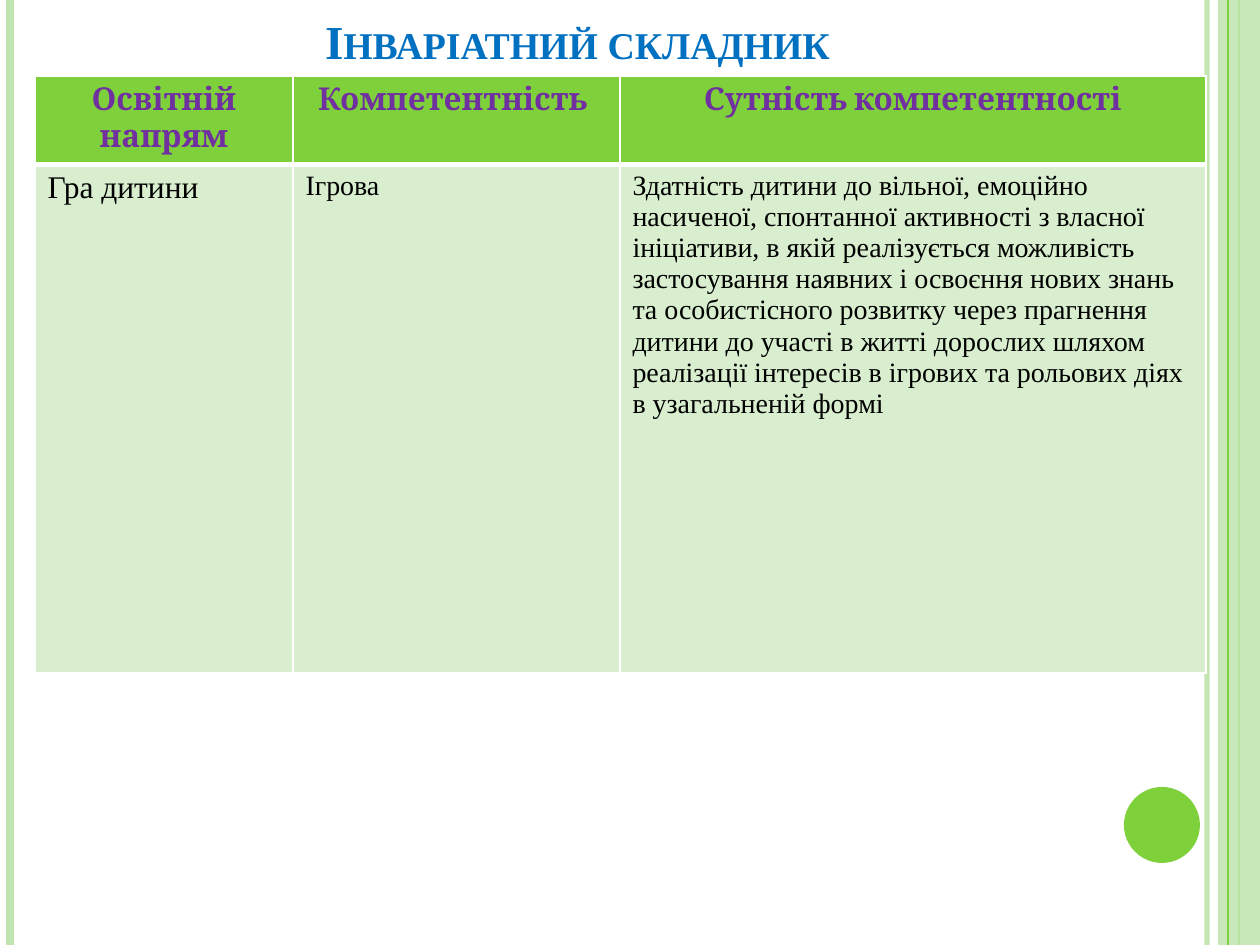
from lxml.etree import SubElement
from pptx import Presentation
from pptx.dml.color import RGBColor
from pptx.enum.shapes import MSO_CONNECTOR, MSO_SHAPE
from pptx.enum.text import MSO_ANCHOR, PP_ALIGN
from pptx.oxml.ns import qn
from pptx.util import Emu, Pt

EMU_PER_PX = 914400 // 126
WIDTH, HEIGHT = 1260, 945
COLORS = {
    "pale": "C0E5AF",
    "green": "7FD13B",
    "body": "D8EECE",
    "white": "FFFFFF",
    "black": "000000",
    "blue": "0070C0",
    "purple": "7030A0",
}
SERIF = "Times New Roman"
HEADINGS = ["Освітній напрям", "Компетентність ", "Сутність компетентності"]
DETAILS = [
    "Гра дитини",
    "Ігрова",
    "Здатність дитини до вільної, емоційно насиченої, спонтанної активності "
    "з власної ініціативи, в якій реалізується можливість застосування наявних "
    "і освоєння нових знань та особистісного розвитку через прагнення дитини "
    "до участі в житті дорослих шляхом реалізації інтересів в ігрових та "
    "рольових діях в узагальненій формі",
]


def px(value):
    return Emu(value * EMU_PER_PX)


def rgb(name):
    return RGBColor.from_string(COLORS[name])


def set_alpha(fill_owner, percent):
    color = next(fill_owner.iter(qn("a:srgbClr")))
    SubElement(color, qn("a:alpha"), val=str(percent * 1000))


class SlideBuilder:
    def __init__(self, slide):
        self.slide = slide

    def stripe(self, x, weight, color, opacity=100):
        line = self.slide.shapes.add_connector(
            MSO_CONNECTOR.STRAIGHT, px(x), 0, px(x), px(HEIGHT))
        line.line.color.rgb = rgb(color)
        line.line.width = Pt(weight)
        properties = line._element.spPr
        SubElement(properties, qn("a:effectLst"))
        if opacity < 100:
            set_alpha(properties, opacity)

    def shape(self, kind, box, color, opacity=100):
        shape = self.slide.shapes.add_shape(kind, *map(px, box))
        shape.shadow.inherit = False
        shape.fill.solid()
        shape.fill.fore_color.rgb = rgb(color)
        shape.line.fill.background()
        if opacity < 100:
            set_alpha(shape._element.spPr, opacity)

    def text(self, frame, words, size, color, font=SERIF, bold=False, align=PP_ALIGN.LEFT):
        paragraph = frame.paragraphs[0]
        paragraph.text = words
        paragraph.alignment = align
        paragraph.font.name = font
        paragraph.font.size = Pt(size)
        paragraph.font.bold = bold
        paragraph.font.color.rgb = rgb(color)
        return paragraph

    def title(self, words, box):
        frame = self.slide.shapes.add_textbox(*map(px, box)).text_frame
        frame.word_wrap = True
        frame.vertical_anchor = MSO_ANCHOR.BOTTOM
        paragraph = self.text(frame, words, 27, "blue", bold=True, align=PP_ALIGN.CENTER)
        paragraph.runs[0]._r.get_or_add_rPr().set("cap", "small")

    def table(self, left, top, widths, heights):
        table = self.slide.shapes.add_table(
            len(heights), len(widths), px(left), px(top),
            px(sum(widths)), px(sum(heights))).table
        for column, width in zip(table.columns, widths):
            column.width = px(width)
        for row, height in zip(table.rows, heights):
            row.height = px(height)
        return table

    def cell(self, cell, fill, top=1, bottom=1):
        properties = cell._tc.get_or_add_tcPr()
        for side, weight in (("L", 1), ("R", 1), ("T", top), ("B", bottom)):
            border = SubElement(properties, qn(f"a:ln{side}"), w=str(Pt(weight)))
            solid = SubElement(border, qn("a:solidFill"))
            SubElement(solid, qn("a:srgbClr"), val=COLORS["white"])
        cell.fill.solid()
        cell.fill.fore_color.rgb = rgb(fill)


def main():
    presentation = Presentation()
    presentation.slide_width, presentation.slide_height = px(WIDTH), px(HEIGHT)
    builder = SlideBuilder(presentation.slides.add_slide(presentation.slide_layouts[6]))

    builder.stripe(1207, 3, "pale", 93)
    builder.stripe(10, 4.5, "pale")
    builder.stripe(1239, 1.5, "green")
    builder.shape(MSO_SHAPE.RECTANGLE, (1218, 0, 42, HEIGHT), "pale", 87)
    builder.stripe(1228, 0.75, "green")
    builder.shape(MSO_SHAPE.OVAL, (1124, 787, 76, 76), "green")

    builder.title("Інваріатний складник", (63, 16, 1029, 59))
    competences = builder.table(35, 76, (258, 327, 586), (88, 509))
    for column, (heading, detail) in enumerate(zip(HEADINGS, DETAILS)):
        header, body = competences.cell(0, column), competences.cell(1, column)
        builder.cell(header, "green", bottom=3)
        builder.text(header.text_frame, heading, 18, "purple", "Cambria", True, PP_ALIGN.CENTER)
        builder.cell(body, "body", top=3)
        builder.text(body.text_frame, detail, 16 if column else 18, "black")

    presentation.save("out.pptx")


if __name__ == "__main__":
    main()
